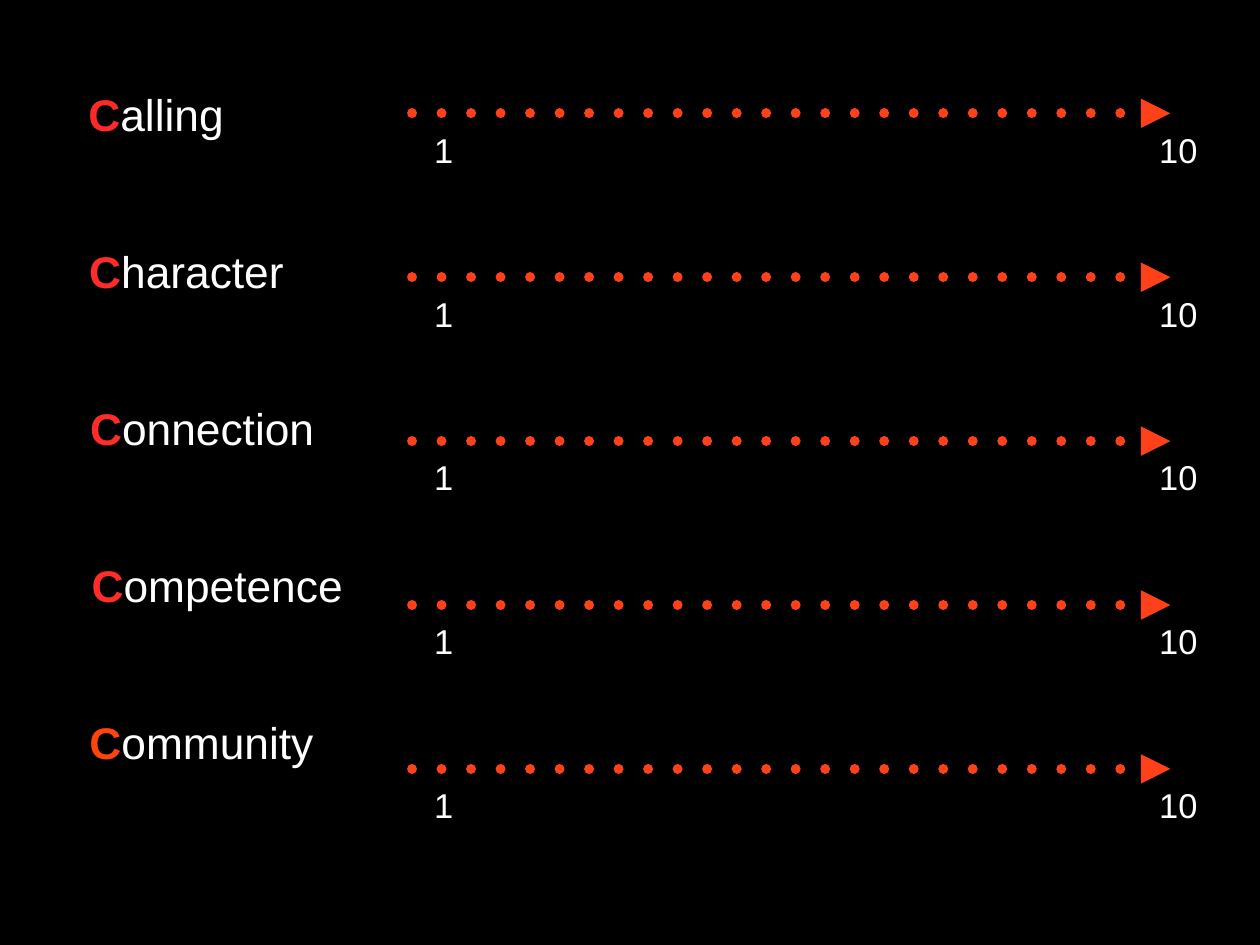
from dataclasses import dataclass

from lxml.etree import SubElement
from pptx import Presentation
from pptx.dml.color import RGBColor
from pptx.enum.shapes import MSO_CONNECTOR
from pptx.enum.text import MSO_ANCHOR, MSO_AUTO_SIZE, PP_ALIGN
from pptx.oxml.ns import qn
from pptx.shapes.shapetree import GroupShapes, SlideShapes
from pptx.util import Cm, Pt

BLACK = RGBColor(0x00, 0x00, 0x00)
WHITE = RGBColor(0xFF, 0xFF, 0xFF)
RED = RGBColor(0xFF, 0x2C, 0x2A)
CALLING_RED = RGBColor(0xFF, 0x2A, 0x28)
COMMUNITY_ORANGE = RGBColor(0xFF, 0x43, 0x0C)
ARROW_ORANGE = RGBColor(0xFF, 0x41, 0x1A)

LABEL_TOP, LABEL_PITCH, LABEL_HEIGHT = 2.36, 4.5, 1.8
SCALE_TOP, SCALE_PITCH = 3.25, 4.7
SCALE_START, SCALE_END = 11.81, 33.55
NUMBER_DROP, NUMBER_HEIGHT = 0.3, 1.47
INSET = Cm(0.15)


@dataclass(frozen=True)
class Quality:
    initial: str
    rest: str
    left: float
    width: float
    colour: RGBColor = RED


@dataclass(frozen=True)
class ScaleNumber:
    text: str
    left: float
    width: float


QUALITIES = [
    Quality("C", "alling", 2.34, 4.27, CALLING_RED),
    Quality("C", "haracter", 2.36, 5.97),
    Quality("C", "onnection", 2.39, 6.81),
    Quality("C", "ompetence", 2.39, 7.67),
    Quality("C", "ommunity", 2.41, 6.73, COMMUNITY_ORANGE),
]
NUMBERS = [ScaleNumber("1", 12.29, 0.86), ScaleNumber("10", 33.07, 1.42)]


def add_text(shapes: SlideShapes | GroupShapes, left: float, top: float, width: float,
             height: float, parts: list[str], size: int) -> list:
    box = shapes.add_textbox(Cm(left), Cm(top), Cm(width), Cm(height))
    frame = box.text_frame
    frame.word_wrap = False
    frame.auto_size = MSO_AUTO_SIZE.SHAPE_TO_FIT_TEXT
    frame.vertical_anchor = MSO_ANCHOR.MIDDLE
    frame.margin_left = frame.margin_right = INSET
    frame.margin_top = frame.margin_bottom = INSET
    para = frame.paragraphs[0]
    para.alignment = PP_ALIGN.CENTER
    for part in parts:
        run = para.add_run()
        run.text = part
        run.font.name = "Arial"
        run.font.size = Pt(size)
        run.font.color.rgb = WHITE
    return list(para.runs)


def add_label(shapes: SlideShapes, quality: Quality, top: float) -> None:
    initial, _ = add_text(shapes, quality.left, top, quality.width, LABEL_HEIGHT,
                          [quality.initial, quality.rest], 36)
    initial.font.bold = True
    initial.font.color.rgb = quality.colour


def add_dotted_arrow(shapes: GroupShapes, top: float) -> None:
    arrow = shapes.add_connector(MSO_CONNECTOR.STRAIGHT, Cm(SCALE_START), Cm(top),
                                 Cm(SCALE_END), Cm(top))
    arrow.line.color.rgb = ARROW_ORANGE
    arrow.line.width = Pt(8)
    line = arrow.line._get_or_add_ln()
    line.set("cap", "rnd")
    dashes = SubElement(line, qn("a:custDash"))
    SubElement(dashes, qn("a:ds"), d="100000", sp="200000")
    SubElement(line, qn("a:round"))
    SubElement(line, qn("a:tailEnd"), type="triangle", w="med", len="med")
    SubElement(arrow._element.spPr, qn("a:effectLst"))


def add_scale(shapes: SlideShapes, top: float) -> None:
    scale = shapes.add_group_shape().shapes
    add_dotted_arrow(scale, top)
    for number in NUMBERS:
        add_text(scale, number.left, top + NUMBER_DROP, number.width, NUMBER_HEIGHT,
                 [number.text], 28)


def main() -> None:
    deck = Presentation()
    deck.slide_width, deck.slide_height = Cm(36.12), Cm(27.1)
    page = deck.slides.add_slide(deck.slide_layouts[6])
    page.background.fill.solid()
    page.background.fill.fore_color.rgb = BLACK
    for row, quality in enumerate(QUALITIES):
        add_label(page.shapes, quality, LABEL_TOP + row * LABEL_PITCH)
        add_scale(page.shapes, SCALE_TOP + row * SCALE_PITCH)
    deck.save("out.pptx")


if __name__ == "__main__":
    main()
